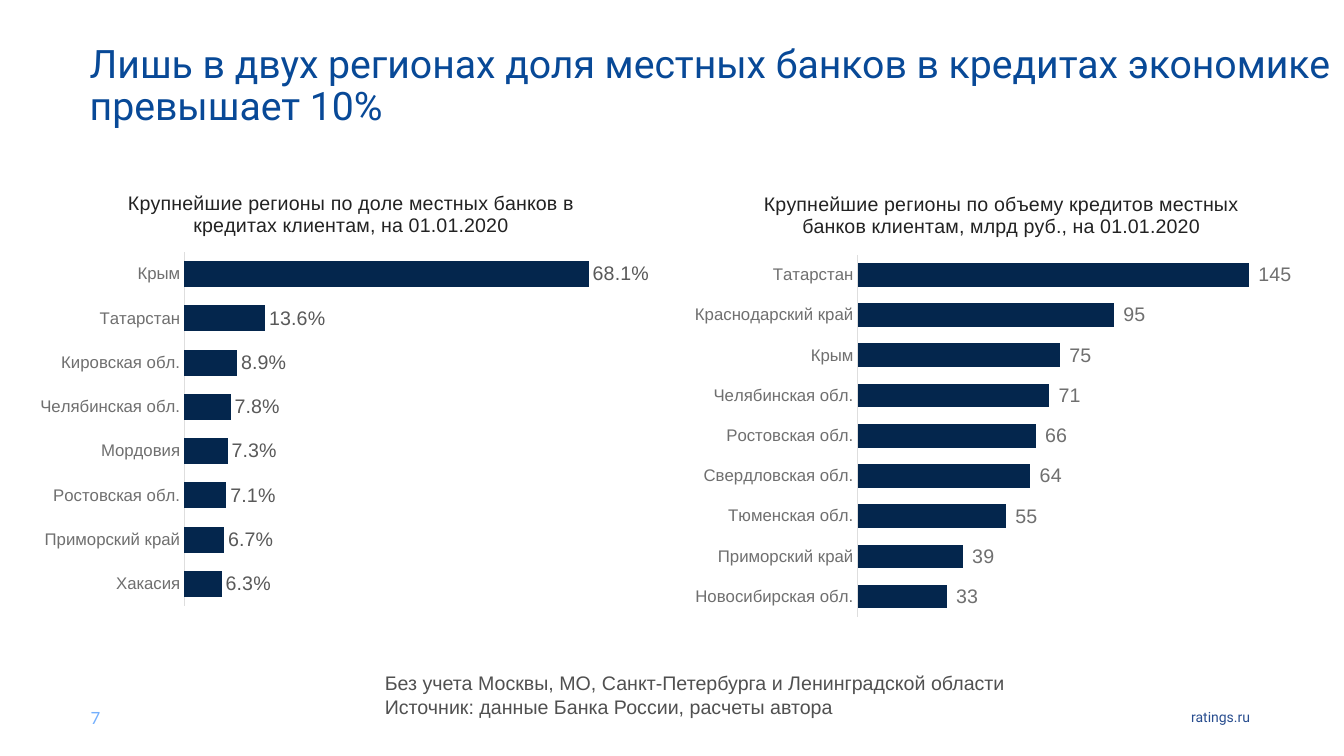
from lxml import etree
from pptx import Presentation
from pptx.chart.data import CategoryChartData
from pptx.dml.color import RGBColor
from pptx.enum.chart import XL_CHART_TYPE as ChartType, XL_LABEL_POSITION as LabelPosition, XL_TICK_MARK as TickMark
from pptx.enum.shapes import MSO_SHAPE as Shape
from pptx.enum.text import MSO_ANCHOR as Anchor, MSO_AUTO_SIZE as AutoSize, PP_ALIGN as Align
from pptx.oxml.ns import qn
from pptx.util import Pt

PERCENT = "0.0%"
BILLIONS = r'_-* #,##0\ _₽_-;\-* #,##0\ _₽_-;_-* "-"?'


def color(value):
    return RGBColor.from_string(value)


def set_font(font, size, value, name="Arial"):
    font.size, font.name, font.bold = Pt(size), name, False
    font.color.rgb = color(value)


def set_plot_layout(chart, fractions):
    """Fix the inner plot area as fractions (x, y, w, h) of the chart."""
    plot_area = chart.plots[0]._element.getparent()
    for old_layout in plot_area.findall(qn("c:layout")):
        plot_area.remove(old_layout)
    layout = etree.Element(qn("c:layout"))
    plot_area.insert(0, layout)
    manual = etree.SubElement(layout, qn("c:manualLayout"))
    settings = [("layoutTarget", "inner"), ("xMode", "edge"), ("yMode", "edge")]
    settings += zip("xywh", map(str, fractions))
    for tag, value in settings:
        etree.SubElement(manual, qn(f"c:{tag}")).set("val", value)


class RegionSlide:
    TITLE, DARK, BAR, AXIS, AXIS_LINE = "084997", "222222", "04264D", "6F6F6F", "DEDEDE"

    def __init__(self, presentation):
        self.slide = presentation.slides.add_slide(presentation.slide_layouts[5])

    def title(self, text, left, top, width, height):
        title = self.slide.shapes.title
        title.left, title.top, title.width, title.height = map(Pt, (left, top, width, height))
        frame = title.text_frame
        frame.text = text
        frame.word_wrap, frame.auto_size = True, AutoSize.NONE
        frame.vertical_anchor = Anchor.TOP
        paragraph = frame.paragraphs[0]
        paragraph.alignment, paragraph.line_spacing = Align.LEFT, 0.9
        set_font(paragraph.font, 28, self.TITLE, "Roboto")

    def text(self, text, box, size, value, name="Arial", wrap=True):
        frame = self.slide.shapes.add_textbox(*map(Pt, box)).text_frame
        frame.text = text
        frame.word_wrap = wrap
        for paragraph in frame.paragraphs:
            set_font(paragraph.font, size, value, name)

    def page_number(self, number, box):
        shape = self.slide.shapes.add_shape(Shape.RECTANGLE, *map(Pt, box))
        shape.shadow.inherit = False
        shape.fill.solid()
        shape.fill.fore_color.rgb = color("FFFFFF")
        shape.line.color.rgb = color("FFFFFF")
        shape.line.width = Pt(1)
        frame = shape.text_frame
        frame.text = number
        frame.vertical_anchor = Anchor.MIDDLE
        paragraph = frame.paragraphs[0]
        paragraph.alignment = Align.LEFT
        set_font(paragraph.font, 12, "73AFFD", "Lato")

    def bar_chart(self, title, values, box, layout, maximum, number_format, label_color):
        data = CategoryChartData(number_format=number_format)
        data.categories = list(values)
        data.add_series("Series 1", list(values.values()))
        chart = self.slide.shapes.add_chart(ChartType.BAR_CLUSTERED, *map(Pt, box), data).chart
        set_font(chart.font, 10, self.DARK)
        chart.has_legend = False
        chart.has_title = True
        chart.chart_title.include_in_layout = False
        chart.chart_title.text_frame.text = title
        set_font(chart.chart_title.text_frame.paragraphs[0].font, 14, self.DARK)

        categories = chart.category_axis
        categories.reverse_order = True
        categories.major_tick_mark = categories.minor_tick_mark = TickMark.NONE
        categories.format.line.color.rgb = color(self.AXIS_LINE)
        categories.format.line.width = Pt(0.75)
        set_font(categories.tick_labels.font, 12, self.AXIS)
        axis = chart.value_axis
        axis.visible = axis.has_major_gridlines = False
        axis.minimum_scale, axis.maximum_scale = 0, maximum
        axis.tick_labels.number_format = number_format
        axis.tick_labels.number_format_is_linked = False

        plot = chart.plots[0]
        plot.gap_width, plot.vary_by_categories = 70, False
        bars = plot.series[0].format.fill
        bars.solid()
        bars.fore_color.rgb = color(self.BAR)
        plot.has_data_labels = True
        labels = plot.data_labels
        labels.show_value, labels.position = True, LabelPosition.OUTSIDE_END
        labels.number_format, labels.number_format_is_linked = number_format, False
        set_font(labels.font, 14, label_color)
        set_plot_layout(chart, layout)


def main():
    presentation = Presentation()
    presentation.slide_width, presentation.slide_height = Pt(960), Pt(540)
    page = RegionSlide(presentation)
    page.text("ratings.ru", (843.8, 502.6, 56.9, 19.4), 10, "284D8F", "Roboto", wrap=False)
    page.page_number("7", (57.6, 502.6, 39.6, 20.2))
    page.title("Лишь в двух регионах доля местных банков в кредитах экономике превышает 10%",
               56.9, 28.1, 902.9, 42.5)
    shares = {"Крым": 0.681, "Татарстан": 0.136, "Кировская обл.": 0.089,
              "Челябинская обл.": 0.078, "Мордовия": 0.073, "Ростовская обл.": 0.071,
              "Приморский край": 0.067, "Хакасия": 0.063}
    page.bar_chart("Крупнейшие регионы по доле местных банков в кредитах клиентам, на 01.01.2020",
                   shares, (21.6, 123.1, 458.6, 316.1), (0.24, 0.18, 0.74, 0.8),
                   0.8, PERCENT, "595959")
    volumes = {"Татарстан": 145, "Краснодарский край": 95, "Крым": 75,
               "Челябинская обл.": 71, "Ростовская обл.": 66, "Свердловская обл.": 64,
               "Тюменская обл.": 55, "Приморский край": 39, "Новосибирская обл.": 33}
    page.bar_chart("Крупнейшие регионы по объему кредитов местных банков клиентам, млрд руб., на 01.01.2020",
                   volumes, (491.8, 123.8, 447.1, 323.3), (0.27, 0.18, 0.69, 0.8),
                   160, BILLIONS, "6F6F6F")
    page.text("Без учета Москвы, МО, Санкт-Петербурга и Ленинградской области\n"
              "Источник: данные Банка России, расчеты автора",
              (267.8, 475.9, 458.6, 41), 14, "505050")
    presentation.save("out.pptx")


if __name__ == "__main__":
    main()
